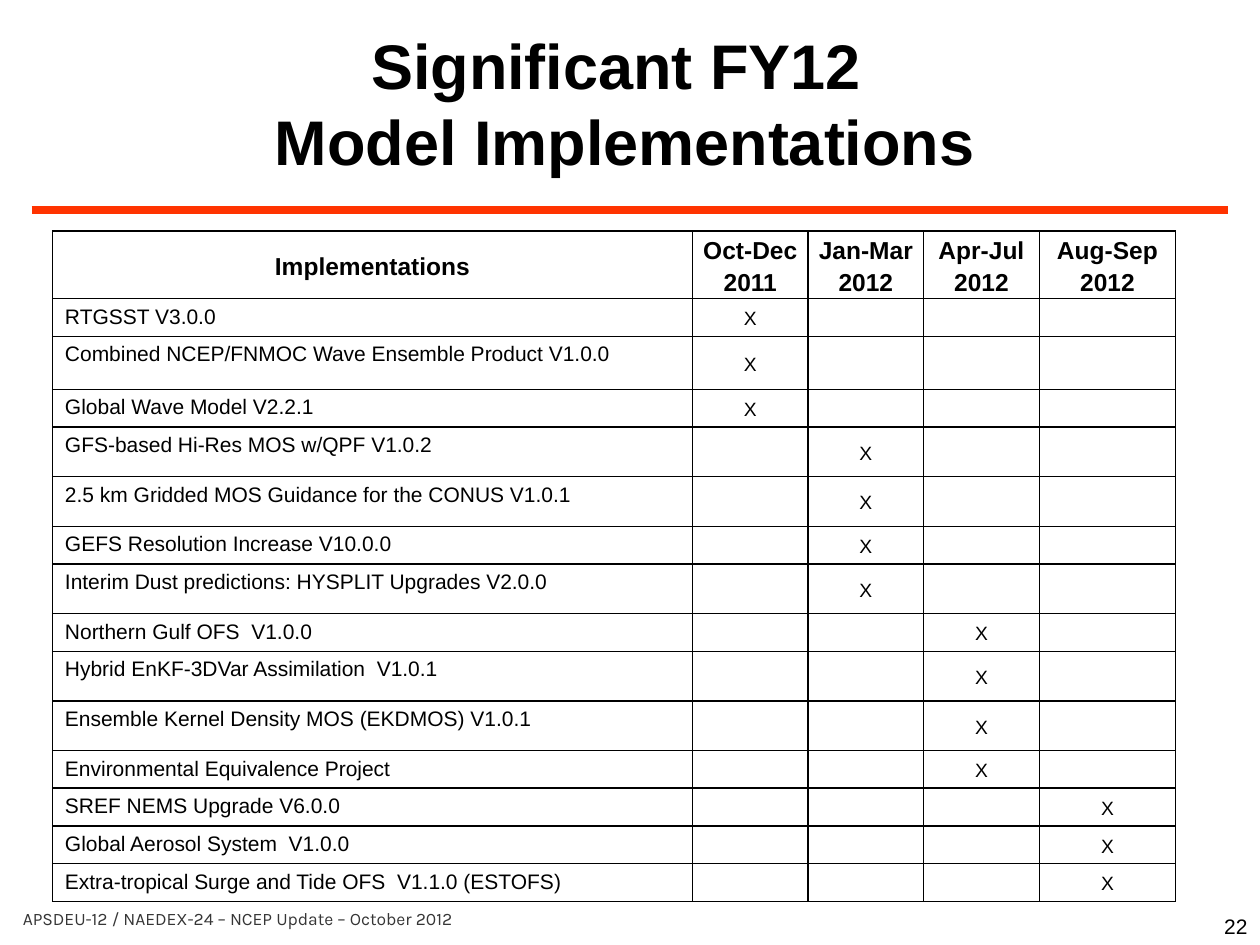
from lxml.etree import SubElement
from pptx import Presentation
from pptx.dml.color import RGBColor
from pptx.enum.shapes import MSO_CONNECTOR
from pptx.enum.text import MSO_ANCHOR, MSO_AUTO_SIZE, PP_ALIGN
from pptx.oxml.ns import qn
from pptx.util import Cm, Pt

BLACK = "000000"
PERIODS = ["Oct-Dec\n2011", "Jan-Mar\n2012", "Apr-Jul\n2012", "Aug-Sep\n2012"]
SHORT, MEDIUM, TALL = 0.76, 1, 1.07
IMPLEMENTATIONS = [
    ("RTGSST V3.0.0", 1, SHORT),
    ("Combined NCEP/FNMOC Wave Ensemble Product V1.0.0", 1, TALL),
    ("Global Wave Model V2.2.1", 1, SHORT),
    ("GFS-based Hi-Res MOS w/QPF V1.0.2", 2, MEDIUM),
    ("2.5 km Gridded MOS Guidance for the CONUS V1.0.1", 2, MEDIUM),
    ("GEFS Resolution Increase V10.0.0", 2, SHORT),
    ("Interim Dust predictions: HYSPLIT Upgrades V2.0.0", 2, MEDIUM),
    ("Northern Gulf OFS  V1.0.0", 3, SHORT),
    ("Hybrid EnKF-3DVar Assimilation  V1.0.1", 3, MEDIUM),
    ("Ensemble Kernel Density MOS (EKDMOS) V1.0.1", 3, MEDIUM),
    ("Environmental Equivalence Project", 3, SHORT),
    ("SREF NEMS Upgrade V6.0.0", 4, SHORT),
    ("Global Aerosol System  V1.0.0", 4, SHORT),
    ("Extra-tropical Surge and Tide OFS  V1.1.0 (ESTOFS)", 4, SHORT),
]


def color(value):
    return RGBColor.from_string(value)


class SlideBuilder:
    font = "Arial"
    accent = "FF3300"
    border_width = Pt(1)

    def __init__(self, slide):
        self.slide = slide

    def set_text(self, frame, text, size, bold=False, align=PP_ALIGN.LEFT,
                 font=None, ink=BLACK, spacing=None):
        frame.text = text
        for paragraph in frame.paragraphs:
            paragraph.alignment = align
            paragraph.line_spacing = spacing
            paragraph.font.name = font or self.font
            paragraph.font.size = Pt(size)
            paragraph.font.bold = bold
            paragraph.font.color.rgb = color(ink)

    def text(self, left, top, width, height, text, size,
             anchor=MSO_ANCHOR.TOP, grow=False, **style):
        frame = self.slide.shapes.add_textbox(
            Cm(left), Cm(top), Cm(width), Cm(height)).text_frame
        frame.word_wrap = True
        frame.vertical_anchor = anchor
        if grow:
            frame.auto_size = MSO_AUTO_SIZE.SHAPE_TO_FIT_TEXT
        self.set_text(frame, text, size, **style)

    def rule(self, left, right, y, width):
        rule = self.slide.shapes.add_connector(
            MSO_CONNECTOR.STRAIGHT, Cm(left), Cm(y), Cm(right), Cm(y))
        rule.line.color.rgb = color(self.accent)
        rule.line.width = Pt(width)
        SubElement(rule._element.spPr, qn("a:effectLst"))

    def table(self, left, top, widths, heights):
        table = self.slide.shapes.add_table(
            len(heights), len(widths), Cm(left), Cm(top),
            Cm(sum(widths)), Cm(sum(heights))).table
        table.first_row = table.horz_banding = False
        for column, width in zip(table.columns, widths):
            column.width = Cm(width)
        for row, height in zip(table.rows, heights):
            row.height = Cm(height)
        return table

    def cell(self, cell, text, size, side=0.18, edge=0,
             anchor=MSO_ANCHOR.MIDDLE, **style):
        cell.margin_left = cell.margin_right = Cm(side)
        cell.margin_top = cell.margin_bottom = Cm(edge)
        cell.vertical_anchor = anchor
        properties = cell._tc.get_or_add_tcPr()
        for border in ("a:lnL", "a:lnR", "a:lnT", "a:lnB"):
            line = SubElement(properties, qn(border), w=str(self.border_width))
            SubElement(SubElement(line, qn("a:solidFill")),
                       qn("a:srgbClr"), val=BLACK)
        cell.fill.background()
        self.set_text(cell.text_frame, text, size, **style)


def main():
    deck = Presentation()
    deck.slide_width, deck.slide_height = Cm(25.4), Cm(19.05)
    builder = SlideBuilder(deck.slides.add_slide(deck.slide_layouts[6]))
    centred = {"align": PP_ALIGN.CENTER, "spacing": 1.15}

    builder.rule(0.64, 24.76, 4.23, 4.5)

    schedule = builder.table(1.06, 4.66, [12.9, 2.33, 2.33, 2.33, 2.75],
                             [1.36] + [height for *_, height in IMPLEMENTATIONS])
    for column, heading in enumerate(["Implementations"] + PERIODS):
        builder.cell(schedule.cell(0, column), heading, 14, bold=True, **centred)
    for row, (model, period, _) in enumerate(IMPLEMENTATIONS, 1):
        builder.cell(schedule.cell(row, 0), model, 12, side=0.25, edge=0.13,
                     anchor=MSO_ANCHOR.TOP)
        for column in range(1, len(PERIODS) + 1):
            mark = "X" if column == period else ""
            builder.cell(schedule.cell(row, column), mark, 11, **centred)

    builder.text(4.66, 0.42, 15.88, 3.33, "Significant FY12 \nModel Implementations",
                 36, grow=True, bold=True, align=PP_ALIGN.CENTER)
    builder.text(0.21, 17.99, 23.92, 1.06,
                 "APSDEU-12 / NAEDEX-24 – NCEP Update – October 2012",
                 10, anchor=MSO_ANCHOR.MIDDLE, font="Karla", ink="363636")
    builder.text(20.11, 17.78, 5.29, 1.27, "22", 12,
                 anchor=MSO_ANCHOR.BOTTOM, align=PP_ALIGN.RIGHT)

    deck.save("out.pptx")


if __name__ == "__main__":
    main()
